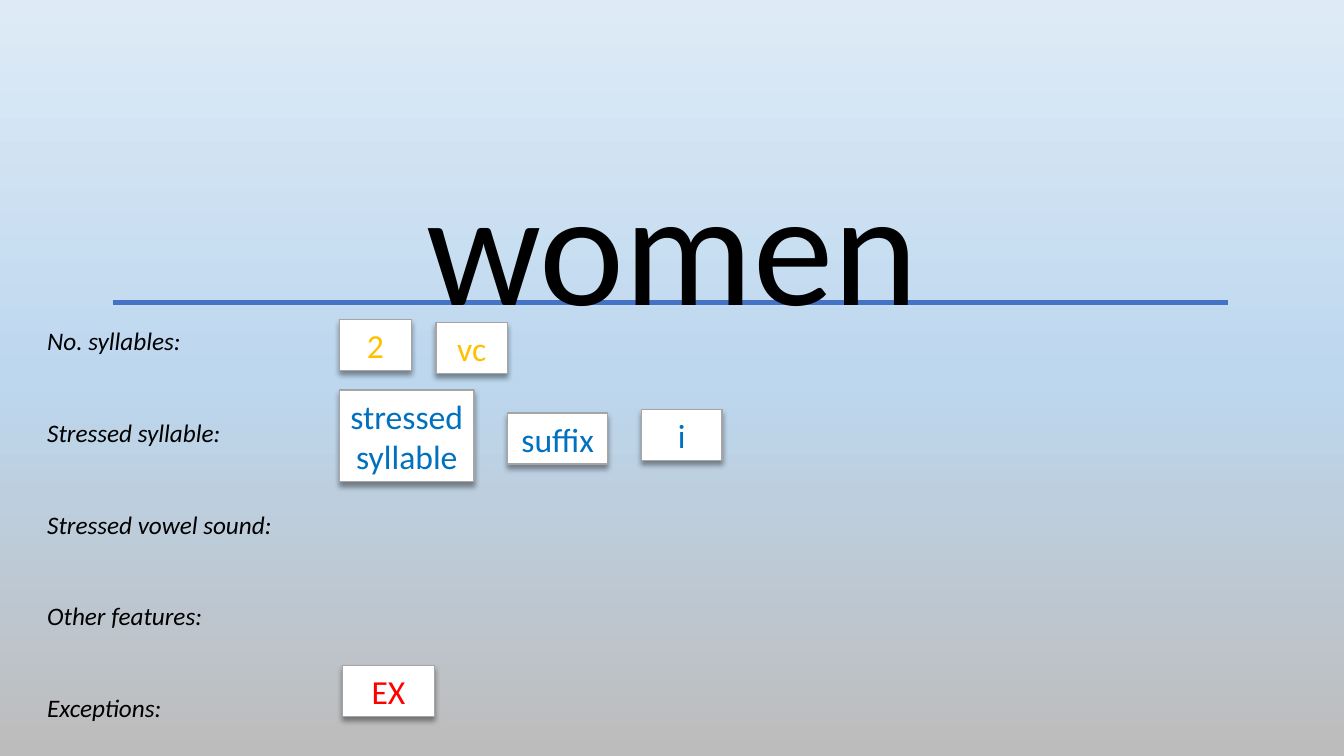
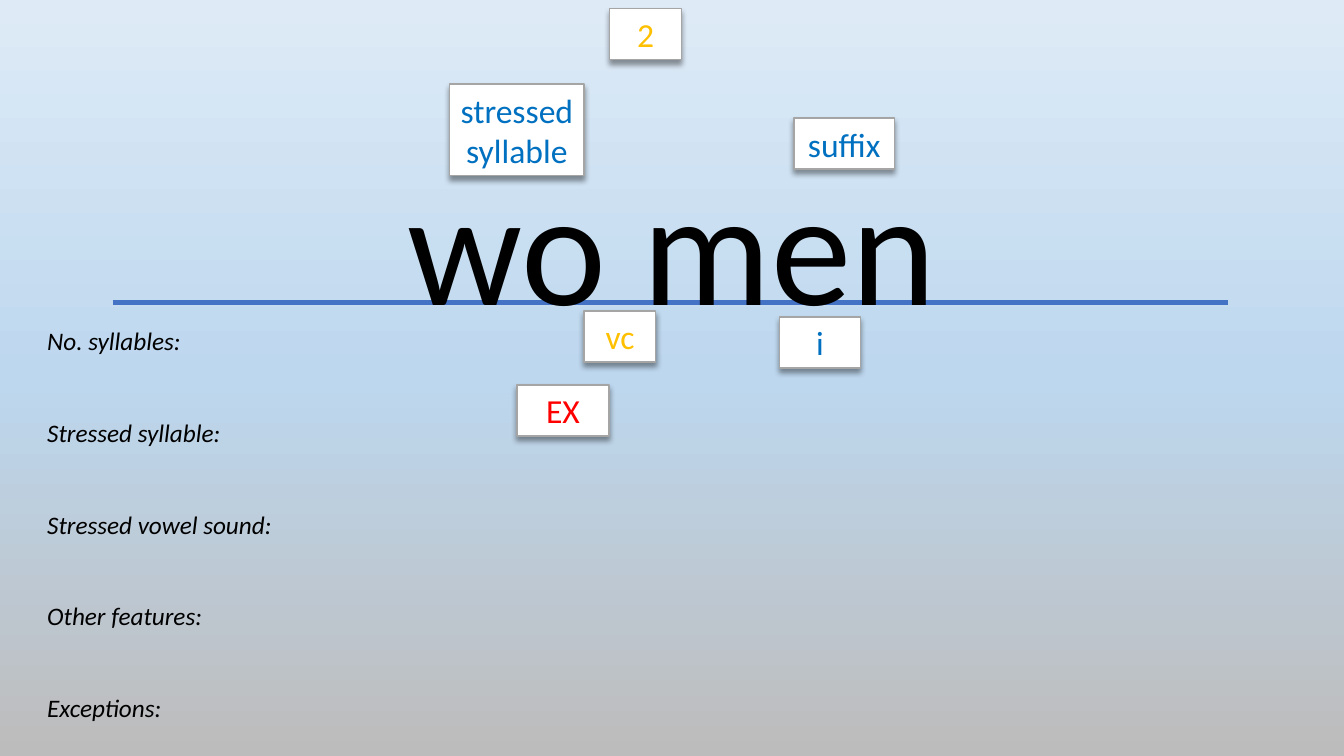
"""Build two spelling slides that sort the features of the word women."""
from copy import deepcopy

from lxml import etree
from pptx import Presentation
from pptx.dml.color import RGBColor
from pptx.enum.shapes import MSO_CONNECTOR, MSO_SHAPE
from pptx.enum.text import MSO_AUTO_SIZE, PP_ALIGN
from pptx.oxml.ns import qn
from pptx.util import Pt

RECT = MSO_SHAPE.RECTANGLE
STRAIGHT = MSO_CONNECTOR.STRAIGHT
GROW = MSO_AUTO_SIZE.SHAPE_TO_FIT_TEXT
LEFT, CENTER = PP_ALIGN.LEFT, PP_ALIGN.CENTER

BLACK = RGBColor(0x00, 0x00, 0x00)
WHITE = RGBColor(0xFF, 0xFF, 0xFF)
GRAY = RGBColor(0xA5, 0xA5, 0xA5)
RULE_BLUE = RGBColor(0x44, 0x72, 0xC4)
BLUE = RGBColor(0x00, 0x70, 0xC0)
GOLD = RGBColor(0xFF, 0xC0, 0x00)
RED = RGBColor(0xFF, 0x00, 0x00)
SKY = [
    (0, RGBColor(0xDE, 0xEB, 0xF7)),
    (0.5, RGBColor(0xBD, 0xD7, 0xEE)),
    (1, RGBColor(0xBD, 0xBC, 0xBC)),
]
FONT = "Calibri"

LABELS = [
    "No. syllables:",
    "Stressed syllable:",
    "Stressed vowel sound:",
    "Other features:",
    "Exceptions:",
]
LABEL_GAP = 43.9
CARDS = {
    "stressed\nsyllable": (96, 65.5, BLUE),
    "2": (51.2, 36.4, GOLD),
    "vc": (51.2, 36.4, GOLD),
    "suffix": (71.5, 36.4, BLUE),
    "i": (57.6, 36.4, BLUE),
    "EX": (65.8, 36.4, RED),
}
SLIDES = [
    ("women", [(242.6, 278.6), (242.6, 228.2), (311.4, 230.3),
               (362.6, 295.1), (458.2, 292.4), (244.6, 475.4)]),
    ("wo men", [(321.2, 60), (435.6, 6.2), (417.3, 222.1),
                (567.3, 84.4), (556.9, 226.4), (369.2, 275)]),
]


def write(tf, text, size, color, align=CENTER, italic=False):
    tf.word_wrap = True
    tf.auto_size = GROW
    tf.text = text
    for p in tf.paragraphs:
        p.alignment = align
        for r in p.runs:
            r.font.name = FONT
            r.font.size = Pt(size)
            r.font.italic = italic
            r.font.color.rgb = color


def add_card(s, text, x, y):
    w, h, color = CARDS[text]
    sp = s.shapes.add_shape(RECT, Pt(x), Pt(y), Pt(w), Pt(h))
    sp.fill.solid()
    sp.fill.fore_color.rgb = WHITE
    sp.line.color.rgb = GRAY
    sp.line.width = Pt(1)
    sp.shadow.inherit = False
    effects = sp.element.spPr.find(qn("a:effectLst"))
    shadow = etree.SubElement(effects, qn("a:outerShdw"), blurRad=str(Pt(4)),
                              dist=str(Pt(3)), dir="5400000", rotWithShape="0")
    tint = etree.SubElement(shadow, qn("a:srgbClr"), val=str(BLACK))
    etree.SubElement(tint, qn("a:alpha"), val="40000")
    write(sp.text_frame, text, 24, color)


prs = Presentation()
prs.slide_width, prs.slide_height = Pt(960), Pt(540)

master = prs.slide_master
fill = master.background.fill
fill.gradient()
fill.gradient_angle = 270
stop_list = next(master.element.iter(qn("a:gsLst")))
stop_list.insert(1, deepcopy(stop_list[0]))
for stop, (position, color) in zip(fill.gradient_stops, SKY):
    stop.position = position
    stop.color.rgb = color

for word, places in SLIDES:
    s = prs.slides.add_slide(prs.slide_layouts[6])

    rule = s.shapes.add_connector(STRAIGHT, Pt(80.6), Pt(216), Pt(877), Pt(216))
    rule.line.color.rgb = RULE_BLUE
    rule.line.width = Pt(3)
    etree.SubElement(rule.element.spPr, qn("a:effectLst"))

    title = s.shapes.add_textbox(Pt(100), Pt(100), Pt(760), Pt(147))
    write(title.text_frame, word, 115, BLACK)

    labels = s.shapes.add_textbox(Pt(26.6), Pt(229), Pt(176.4), Pt(291))
    write(labels.text_frame, "\n".join(LABELS), 18, BLACK, LEFT, True)
    for p in labels.text_frame.paragraphs[1:]:
        p.space_before = Pt(LABEL_GAP)

    for text, (x, y) in zip(CARDS, places):
        add_card(s, text, x, y)

prs.save("out.pptx")
